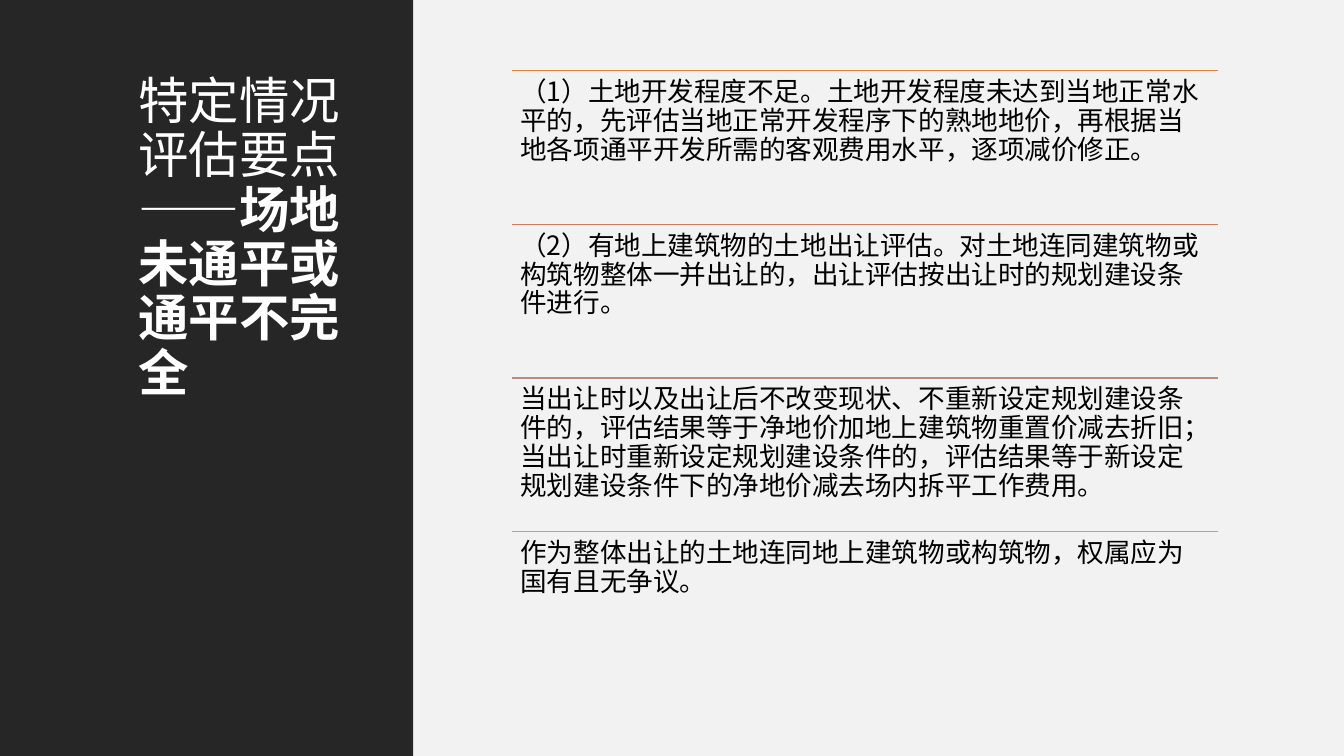
"""Build a slide on land valuation with a dark title panel and four ruled points."""
import dataclasses

import lxml.etree
import pptx
import pptx.dml.color
import pptx.enum.shapes
import pptx.enum.text
import pptx.oxml.ns
import pptx.util

COLUMNS, ROWS = 160, 90


@dataclasses.dataclass(frozen=True)
class Theme:
    """Colours, font and type sizes of the slide."""
    font: str = "Noto Sans CJK SC"
    panel: str = "262626"
    page: str = "F2F2F2"
    title: str = "FFFFFF"
    body: str = "000000"
    title_size: float = 36
    body_size: float = 19
    rule_width: float = 1
    line_spacing: float = 0.9


@dataclasses.dataclass(frozen=True)
class Area:
    """A rectangle in grid columns and rows."""
    left: float
    top: float
    width: float
    height: float

    def emu(self) -> tuple[int, int, int, int]:
        """Return left, top, width and height in EMU."""
        return (across(self.left), down(self.top), across(self.width), down(self.height))


@dataclasses.dataclass(frozen=True)
class Point:
    """One valuation point and the colour of the rule above it."""
    rule: str
    wording: str


THEME = Theme()
POINTS = (
    Point("ED7D31", "（1）土地开发程度不足。土地开发程度未达到当地正常水平的，先评估当地正常开发程序下的熟地地价，"
                    "再根据当地各项通平开发所需的客观费用水平，逐项减价修正。"),
    Point("D17B5C", "（2）有地上建筑物的土地出让评估。对土地连同建筑物或构筑物整体一并出让的，"
                    "出让评估按出让时的规划建设条件进行。"),
    Point("B98A82", "当出让时以及出让后不改变现状、不重新设定规划建设条件的，评估结果等于净地价加地上建筑物重置价减去折旧；"
                    "当出让时重新设定规划建设条件的，评估结果等于新设定规划建设条件下的净地价减去场内拆平工作费用。"),
    Point("A5A5A5", "作为整体出让的土地连同地上建筑物或构筑物，权属应为国有且无争议。"),
)
PAGE = Area(49.1, 0, 110.9, ROWS)
PANEL = Area(0, 0, 49.2, ROWS)
HEADING = Area(15.25, 8.4, 28.8, 73.2)
LIST = Area(61, 8.4, 84, 73.2)
POINT_HEIGHT = LIST.height / len(POINTS)

deck = pptx.Presentation()
deck.slide_width = pptx.util.Inches(13.33)
deck.slide_height = pptx.util.Inches(7.5)


def across(columns: float) -> int:
    """Convert grid columns to EMU."""
    return round(deck.slide_width * columns / COLUMNS)


def down(rows: float) -> int:
    """Convert grid rows to EMU."""
    return round(deck.slide_height * rows / ROWS)


def rgb(code: str) -> pptx.dml.color.RGBColor:
    """Return the colour for a hex code."""
    return pptx.dml.color.RGBColor.from_string(code)


def format_run(run, size: float, colour: str, bold: bool = False) -> None:
    """Set the font of a run, for Latin and East Asian letters alike."""
    run.font.name = THEME.font
    run.font.size = pptx.util.Pt(size)
    run.font.bold = bold
    run.font.color.rgb = rgb(colour)
    latin = run.font._element.find(pptx.oxml.ns.qn("a:latin"))
    east_asian = lxml.etree.Element(pptx.oxml.ns.qn("a:ea"), typeface=THEME.font)
    latin.addnext(east_asian)


def prepare_frame(frame) -> None:
    """Wrap text from the top at a fixed size."""
    frame.word_wrap = True
    frame.auto_size = pptx.enum.text.MSO_AUTO_SIZE.NONE
    frame.vertical_anchor = pptx.enum.text.MSO_ANCHOR.TOP


def draw_panel(slide, area: Area, colour: str) -> None:
    """Draw a plain filled rectangle."""
    panel = slide.shapes.add_shape(pptx.enum.shapes.MSO_SHAPE.RECTANGLE, *area.emu())
    panel.shadow.inherit = False
    panel.fill.solid()
    panel.fill.fore_color.rgb = rgb(colour)
    panel.line.fill.background()


def draw_heading(slide) -> None:
    """Fill the title placeholder and bring it above the panels."""
    heading = slide.shapes.title
    heading.left, heading.top, heading.width, heading.height = HEADING.emu()
    prepare_frame(heading.text_frame)
    wording = heading.text_frame.paragraphs[0]
    wording.text = "特定情况评估要点——"
    wording.add_run().text = "场地未通平或通平不完全"
    wording.alignment = pptx.enum.text.PP_ALIGN.LEFT
    wording.line_spacing = THEME.line_spacing
    topic, case = wording.runs
    format_run(topic, THEME.title_size, THEME.title)
    format_run(case, THEME.title_size, THEME.title, bold=True)
    heading.element.getparent().append(heading.element)


def draw_point(slide, point: Point, area: Area) -> None:
    """Draw a rule with the wording of a point below it."""
    left, top, width, height = area.emu()
    rule = slide.shapes.add_connector(
        pptx.enum.shapes.MSO_CONNECTOR.STRAIGHT, left, top, left + width, top)
    rule.line.color.rgb = rgb(point.rule)
    rule.line.width = pptx.util.Pt(THEME.rule_width)
    lxml.etree.SubElement(rule.element.spPr, pptx.oxml.ns.qn("a:effectLst"))

    frame = slide.shapes.add_textbox(left, top, width, height).text_frame
    prepare_frame(frame)
    inset = pptx.util.Inches(0.08)
    frame.margin_left = frame.margin_top = frame.margin_right = frame.margin_bottom = inset
    frame.text = point.wording
    frame.paragraphs[0].line_spacing = THEME.line_spacing
    format_run(frame.paragraphs[0].runs[0], THEME.body_size, THEME.body)


def main() -> None:
    """Draw the slide and save the deck."""
    slide = deck.slides.add_slide(deck.slide_layouts.get_by_name("Title Only"))
    draw_panel(slide, PAGE, THEME.page)
    draw_panel(slide, PANEL, THEME.panel)
    draw_heading(slide)
    for row, point in enumerate(POINTS):
        draw_point(slide, point,
                   Area(LIST.left, LIST.top + row * POINT_HEIGHT, LIST.width, POINT_HEIGHT))
    deck.save("out.pptx")


if __name__ == "__main__":
    main()
